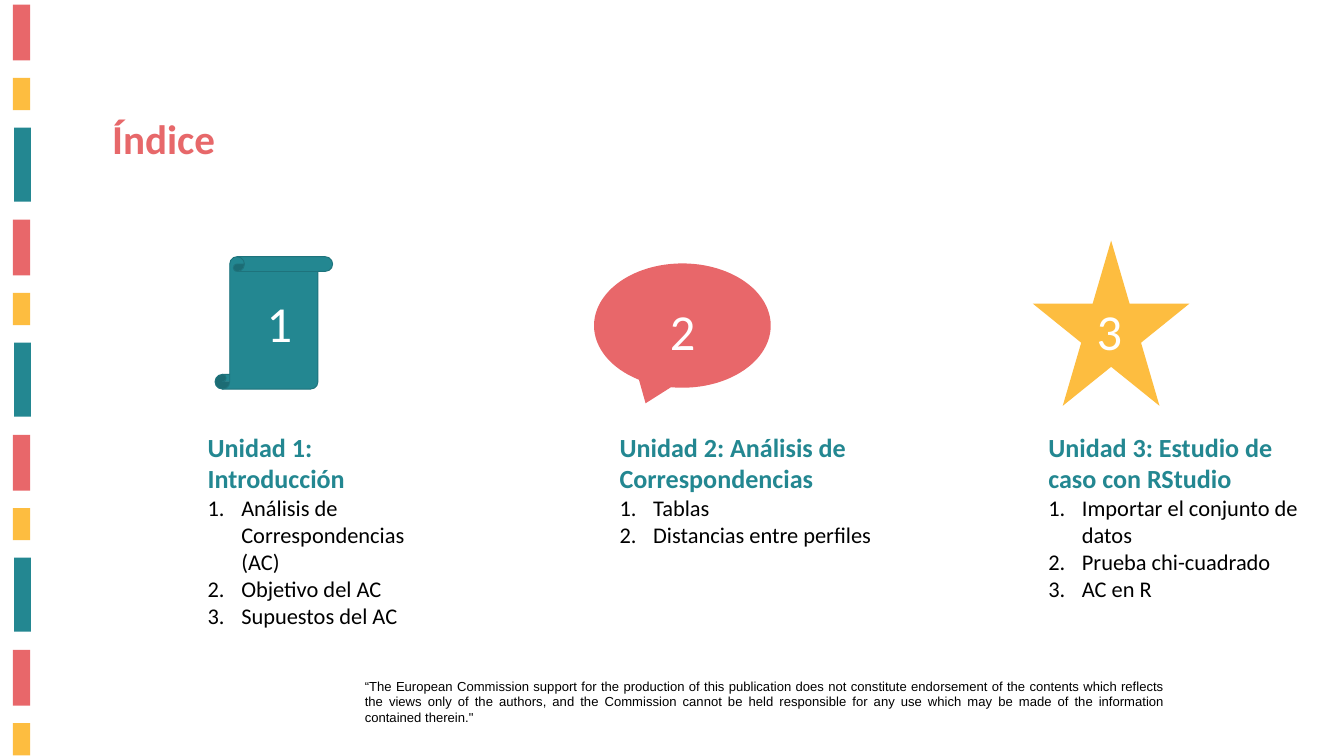
from lxml.etree import SubElement
from pptx import Presentation
from pptx.dml.color import RGBColor
from pptx.enum.shapes import MSO_SHAPE as Shape
from pptx.enum.text import MSO_ANCHOR as Anchor, MSO_AUTO_SIZE as AutoSize, PP_ALIGN as Align
from pptx.oxml.ns import qn
from pptx.util import Emu, Pt

PX = 9144  # EMU per px: 100 px to the inch
WIDTH, HEIGHT = 2000, 1125

CORAL = RGBColor(0xE8, 0x67, 0x6A)
TITLE_CORAL = RGBColor(0xE7, 0x68, 0x6A)
YELLOW = RGBColor(0xFD, 0xBD, 0x40)
TEAL = RGBColor(0x23, 0x87, 0x91)
DARK_TEAL = RGBColor(0x1E, 0x73, 0x7C)
BLACK = RGBColor(0, 0, 0)
WHITE = RGBColor(0xFF, 0xFF, 0xFF)

# Side band: left, top, width, height, colour of each stripe in one period
STRIPES = [
    (19, 7, 26, 83, CORAL),
    (19, 116, 26, 48, YELLOW),
    (21, 190, 25, 110, TEAL),
]
STRIPE_PERIOD = 320

DISCLAIMER = (
    "“The European Commission support for the production of this publication "
    "does not constitute endorsement of the contents which reflects the views "
    "only of the authors, and the Commission cannot be held responsible for any "
    'use which may be made of the information contained therein."'
)

# Units: box, heading, topics
UNITS = [
    ((299, 637, 359, 394), "Unidad 1: Introducción",
     ["Análisis de Correspondencias (AC)", "Objetivo del AC", "Supuestos del AC"]),
    ((912, 637, 413, 185), "Unidad 2: Análisis de Correspondencias",
     ["Tablas", "Distancias entre perfiles"]),
    ((1550, 637, 413, 266), "Unidad 3: Estudio de caso con RStudio",
     ["Importar el conjunto de datos", "Prueba chi-cuadrado", "AC en R"]),
]

# Icons: shape, box, fill, outline, box of the number
ICONS = [
    (Shape.VERTICAL_SCROLL, (320, 382, 175, 197), TEAL, DARK_TEAL, (387, 430, 158, 101)),
    (Shape.OVAL_CALLOUT, (884, 392, 263, 185), CORAL, None, (987, 441, 108, 101)),
    (Shape.STAR_5_POINT, (1537, 358, 233, 246), YELLOW, None, (1622, 441, 150, 101)),
]


def px(*lengths):
    return [Emu(length * PX) for length in lengths]


def add_run(paragraph, text, size, color, bold=False, font="Calibri"):
    run = paragraph.add_run()
    run.text = text
    run.font.name = font
    run.font.size = Pt(size)
    run.font.bold = bold
    run.font.color.rgb = color


def set_up_frame(holder):
    frame = holder.text_frame
    frame.word_wrap = True
    frame.auto_size = AutoSize.NONE
    frame.vertical_anchor = Anchor.TOP
    return frame


def place(holder, box):
    holder.left, holder.top, holder.width, holder.height = px(*box)
    return set_up_frame(holder)


def add_shape(slide, kind, box, fill, outline=None):
    shape = slide.shapes.add_shape(kind, *px(*box))
    shape.shadow.inherit = False
    shape.fill.solid()
    shape.fill.fore_color.rgb = fill
    if outline is None:
        shape.line.fill.background()
    else:
        shape.line.color.rgb = outline
        shape.line.width = Pt(1)


def add_text(slide, box, text, size, color, font="Calibri", align=Align.LEFT):
    frame = set_up_frame(slide.shapes.add_textbox(*px(*box)))
    paragraph = frame.paragraphs[0]
    paragraph.alignment = align
    add_run(paragraph, text, size, color, font=font)


def set_list_format(paragraph, numbered):
    """Numbered topics hang by 50 px; headings sit flush left."""
    paragraph.alignment = Align.LEFT
    paragraph.space_before = Pt(0)
    indent = 50 * PX if numbered else 0
    properties = paragraph._p.get_or_add_pPr()
    properties.set("marL", str(indent))
    properties.set("indent", str(-indent))
    if numbered:
        SubElement(properties, qn("a:buFont"), typeface="+mj-lt")
        SubElement(properties, qn("a:buAutoNum"), type="arabicPeriod")
    else:
        SubElement(properties, qn("a:buNone"))


def fill_unit(body, box, heading, topics):
    frame = place(body, box)
    set_list_format(frame.paragraphs[0], numbered=False)
    add_run(frame.paragraphs[0], heading, 28, TEAL, bold=True)
    for topic in topics:
        paragraph = frame.add_paragraph()
        set_list_format(paragraph, numbered=True)
        add_run(paragraph, topic, 24, BLACK)


def add_side_band(slide):
    for start in range(0, HEIGHT, STRIPE_PERIOD):
        for left, top, width, height, color in STRIPES:
            if start + top < HEIGHT:
                add_shape(slide, Shape.RECTANGLE, (left, start + top, width, height), color)


def main():
    deck = Presentation()
    deck.slide_width, deck.slide_height = px(WIDTH, HEIGHT)
    slide = deck.slides.add_slide(deck.slide_layouts.get_by_name("Comparison"))

    # Side band and disclaimer
    add_side_band(slide)
    add_text(slide, (533, 1004, 1210, 81), DISCLAIMER, 14, BLACK,
             font="Arial", align=Align.JUSTIFY)

    # Title
    title = place(slide.shapes.title, (157, 164, 677, 158)).paragraphs[0]
    title.alignment = Align.LEFT
    add_run(title, "Índice", 44, TITLE_CORAL, bold=True)

    # Units, one body placeholder each; the spare one goes
    _, *bodies, spare = slide.placeholders
    for body, unit in zip(bodies, UNITS):
        fill_unit(body, *unit)
    spare.element.getparent().remove(spare.element)

    # Numbered icons
    for number, (kind, box, fill, outline, number_box) in enumerate(ICONS, start=1):
        add_shape(slide, kind, box, fill, outline)
        add_text(slide, number_box, str(number), 54, WHITE)

    deck.save("out.pptx")


if __name__ == "__main__":
    main()
